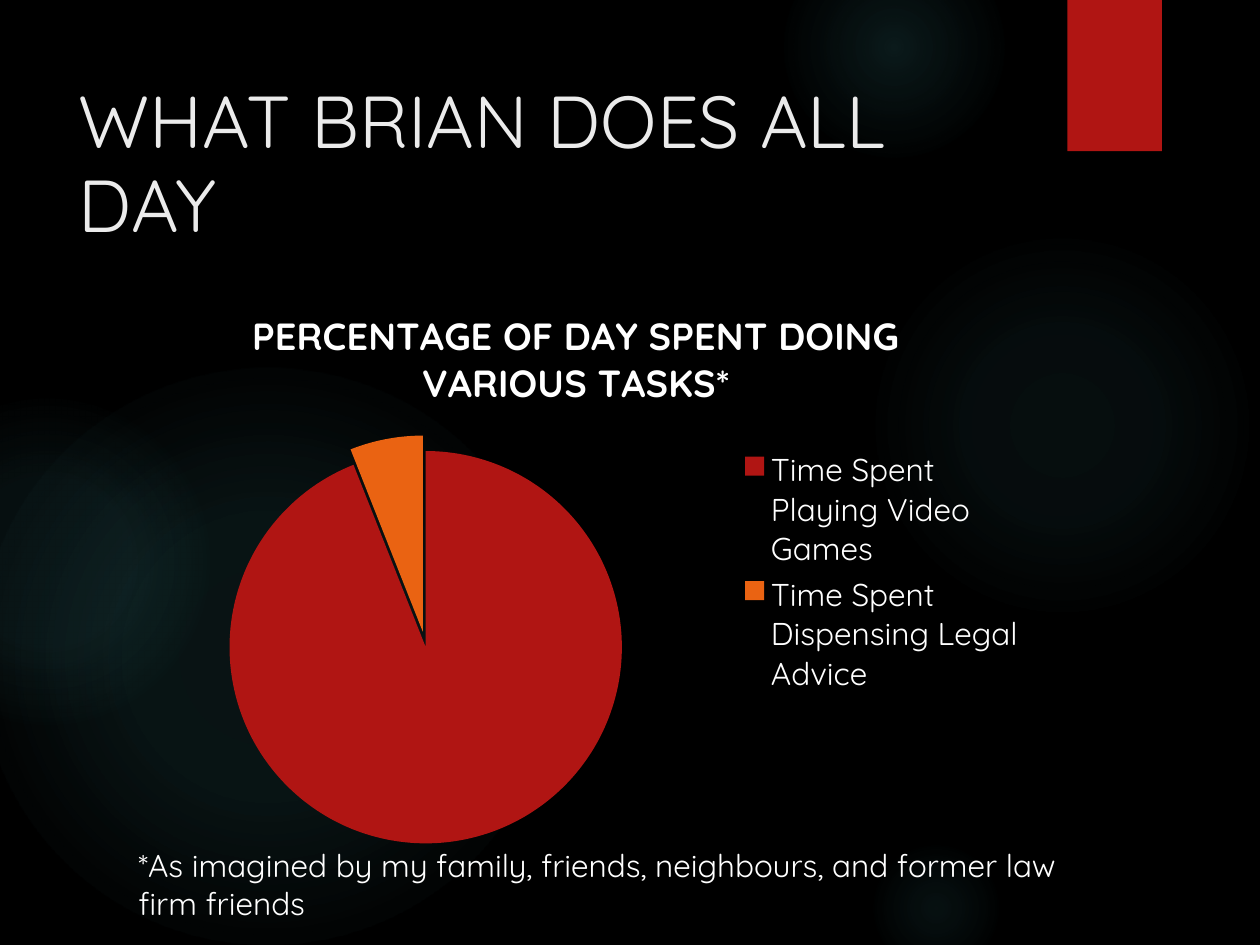
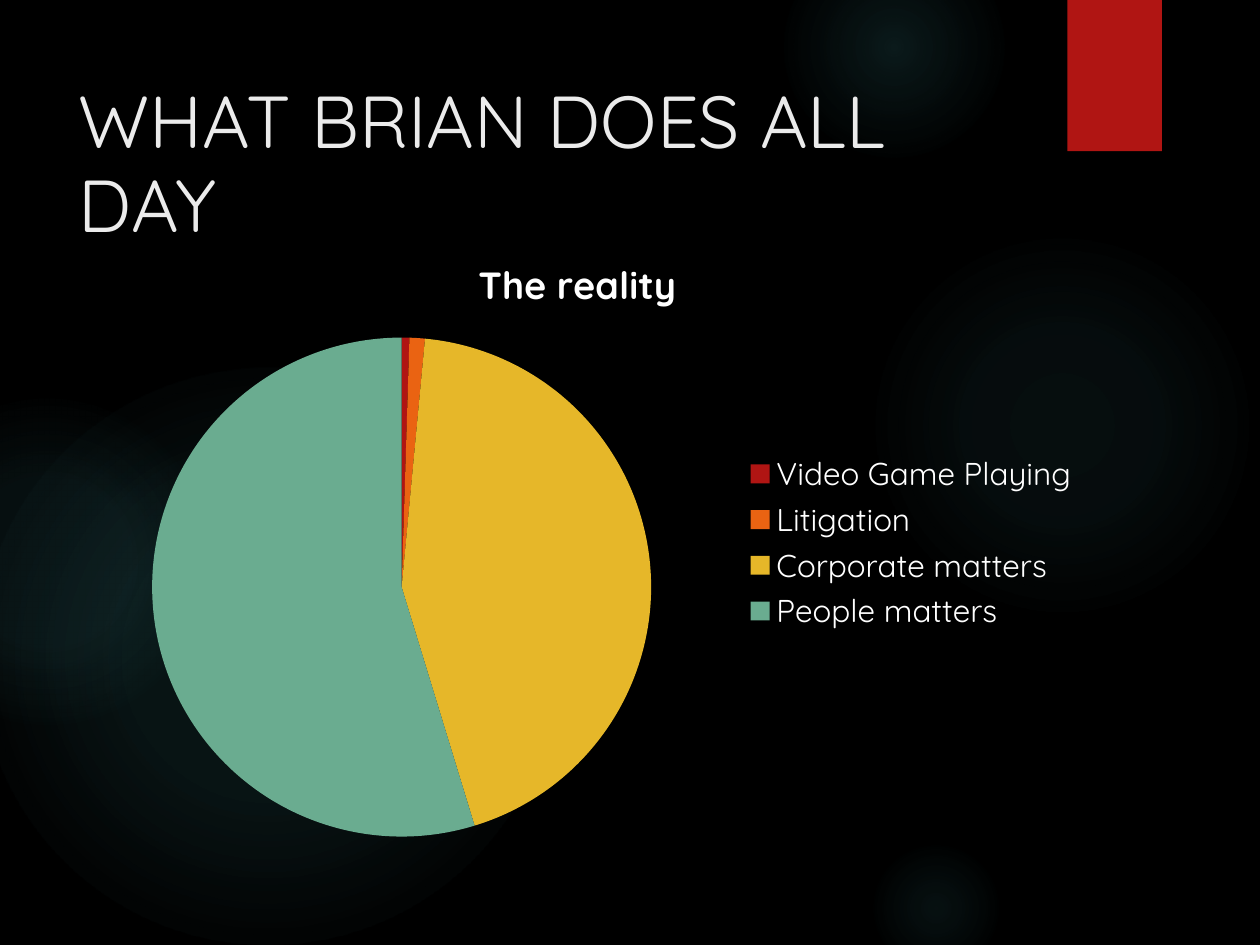
from lxml import etree
from pptx import Presentation
from pptx.chart.data import CategoryChartData
from pptx.dml.color import RGBColor
from pptx.enum.chart import XL_CHART_TYPE as ChartType, XL_LEGEND_POSITION as LegendPosition
from pptx.enum.shapes import MSO_SHAPE as Shape
from pptx.enum.text import MSO_ANCHOR as Anchor
from pptx.oxml import parse_xml
from pptx.oxml.ns import nsdecls, qn
from pptx.util import Pt

FONT = "Quicksand"
BLACK, WHITE, TITLE_COLOR = "000000", "FFFFFF", "EBEBEB"
RED, ORANGE, YELLOW, GREEN = "B01513", "EA6312", "E6B729", "6AAC90"
GLOW_COLOR = "50B9C1"

TITLE = "WHAT BRIAN DOES ALL DAY"
TITLE_AREA = (38, 36, 556, 110)
TAB_AREA = (610, 0, 54, 86.4)

GLOWS = [
    {"left": 496, "top": 132, "size": 222, "stops": [(0, 7), (36, 6), (69, 0)]},
    {"left": 448, "top": -36, "size": 126, "stops": [(0, 14), (36, 7), (73, 0)]},
    {"left": 496, "top": 480, "size": 78, "stops": [(0, 9), (36, 5), (66, 0)]},
    {"left": -12, "top": 210, "size": 330, "stops": [(0, 11), (36, 10), (75, 0)]},
    {"left": -66, "top": 228, "size": 186, "stops": [(0, 8), (36, 8), (72, 0)]},
]

PAGES = [
    {
        "chart_title": "PERCENTAGE OF DAY SPENT DOING VARIOUS TASKS*",
        "area": (65, 161.5, 528.5, 330.5),
        "slices": [
            ("Time Spent Playing Video Games", 94, RED),
            ("Time Spent Dispensing Legal Advice", 6, ORANGE),
        ],
        "explosion": 4,
        "footnote": "*As imagined by my family, friends, neighbours, and former law firm friends",
        "footnote_area": (72, 480, 570, 29),
    },
    {
        "chart_title": "The reality",
        "area": (36, 132, 588, 356),
        "slices": [
            ("Video Game Playing", 0.5, RED),
            ("Litigation", 1, ORANGE),
            ("Corporate matters", 44, YELLOW),
            ("People matters", 55, GREEN),
        ],
    },
]


def color(value):
    return RGBColor.from_string(value)


def points(area):
    return [Pt(length) for length in area]


def style_font(font, size, value, bold=False):
    font.name, font.size, font.bold = FONT, Pt(size), bold
    font.color.rgb = color(value)


def add_block(page, kind, area, value):
    block = page.shapes.add_shape(kind, *points(area))
    block.shadow.inherit = False
    block.fill.solid()
    block.fill.fore_color.rgb = color(value)
    block.line.fill.background()
    return block


def add_glow(page, left, top, size, stops):
    glow = add_block(page, Shape.OVAL, (left, top, size, size), GLOW_COLOR)
    stop_xml = "".join(
        f'<a:gs pos="{position * 1000}"><a:srgbClr val="{GLOW_COLOR}">'
        f'<a:alpha val="{opacity * 1000}"/></a:srgbClr></a:gs>'
        for position, opacity in stops
    )
    gradient = parse_xml(
        f'<a:gradFill {nsdecls("a")} rotWithShape="1"><a:gsLst>{stop_xml}</a:gsLst>'
        '<a:path path="circle"><a:fillToRect l="50000" t="50000" r="50000" b="50000"/>'
        "</a:path></a:gradFill>"
    )
    properties = glow.element.spPr
    properties.replace(properties.find(qn("a:solidFill")), gradient)


def add_text(page, area, text, size, value, anchor=Anchor.TOP, spacing=None):
    box = page.shapes.add_textbox(*points(area))
    box.text_frame.word_wrap = True
    box.text_frame.vertical_anchor = anchor
    para = box.text_frame.paragraphs[0]
    para.line_spacing = spacing
    span = para.add_run()
    span.text = text
    style_font(span.font, size, value)


def add_pie(page, area, title, slices, explosion):
    data = CategoryChartData()
    data.categories = [name for name, _, _ in slices]
    data.add_series("Series 1", [share for _, share, _ in slices])
    chart = page.shapes.add_chart(ChartType.PIE, *points(area), data).chart
    style_font(chart.font, 18, WHITE)
    chart.has_title = True
    span = chart.chart_title.text_frame.paragraphs[0].add_run()
    span.text = title
    style_font(span.font, 21.6, WHITE, bold=True)
    chart.has_legend = True
    chart.legend.position = LegendPosition.RIGHT
    chart.legend.include_in_layout = False
    style_font(chart.legend.font, 18, WHITE)
    plot = chart.plots[0]
    plot.vary_by_categories = True
    series = plot.series[0]
    for index, (_, _, value) in enumerate(slices):
        fill = series.points[index].format.fill
        fill.solid()
        fill.fore_color.rgb = color(value)
    if explosion:
        offset = etree.Element(qn("c:explosion"), val=str(explosion))
        series._element.find(qn("c:dPt")).addprevious(offset)


def add_base(deck):
    page = deck.slides.add_slide(deck.slide_layouts[6])
    page.background.fill.solid()
    page.background.fill.fore_color.rgb = color(BLACK)
    for glow in GLOWS:
        add_glow(page, **glow)
    add_block(page, Shape.RECTANGLE, TAB_AREA, RED)
    add_text(page, TITLE_AREA, TITLE, 42, TITLE_COLOR, Anchor.BOTTOM, 0.95)
    return page


def main():
    deck = Presentation()
    deck.slide_width, deck.slide_height = Pt(720), Pt(540)
    for content in PAGES:
        page = add_base(deck)
        add_pie(page, content["area"], content["chart_title"],
                content["slices"], content.get("explosion"))
        if "footnote" in content:
            add_text(page, content["footnote_area"], content["footnote"], 18, WHITE)
    deck.save("out.pptx")


if __name__ == "__main__":
    main()
